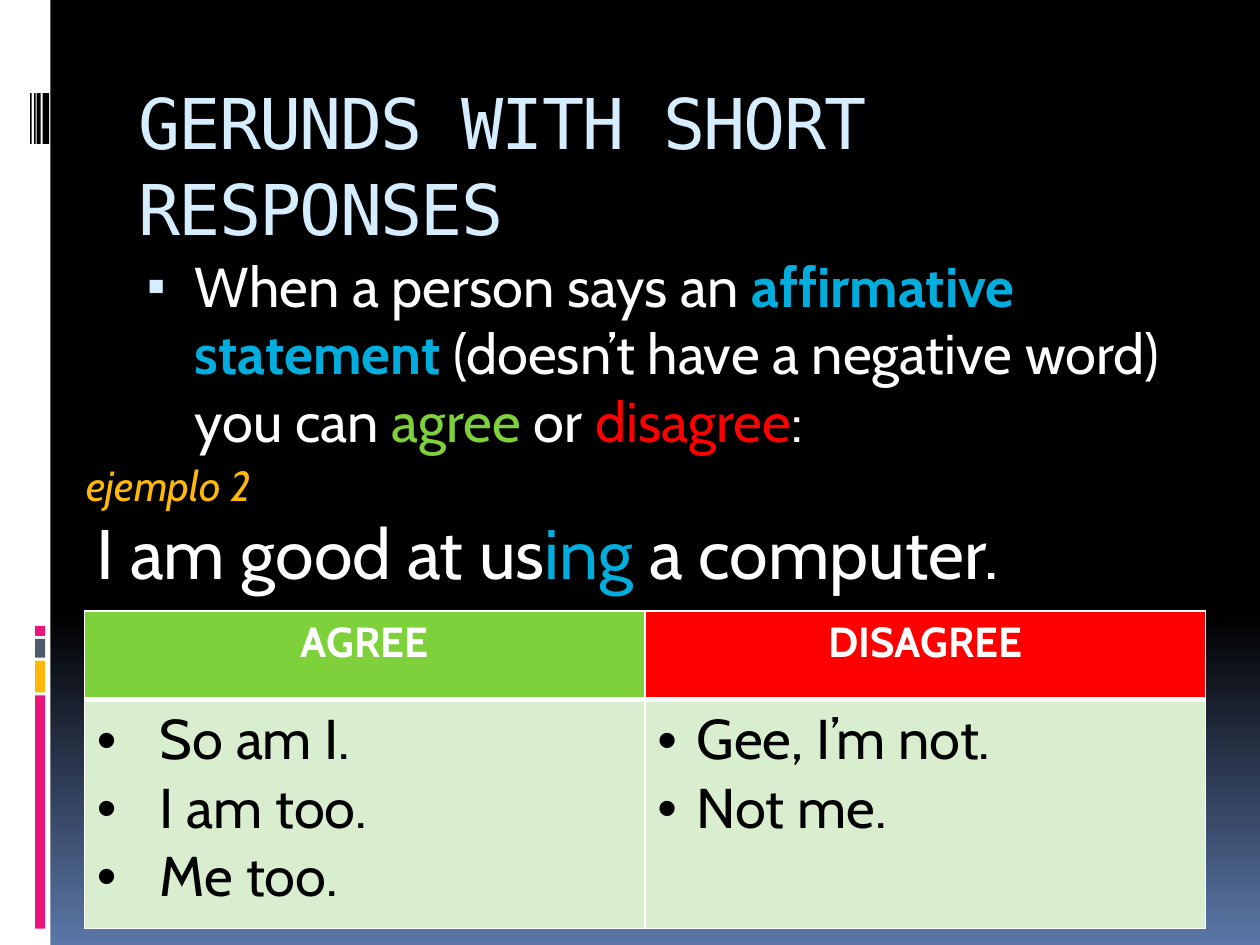
from lxml import etree
from pptx import Presentation
from pptx import util as u
from pptx.dml.color import RGBColor
from pptx.enum import shapes, text
from pptx.oxml import ns

THEME = {
    "white": "FFFFFF", "black": "000000", "ice": "D6ECFF", "blue": "00ADDC",
    "green": "7FD13B", "red": "FF0000", "gold": "FEB80A", "pink": "EA157A",
    "slate": "4E5B6F", "dusk": "5B77A8", "mint": "D8EECE",
    "body_font": "Cabin", "title_font": "DejaVu Sans Mono",
    "large": 40, "medium": 32, "small": 24,
}

BACKDROP = [(0, "black"), (65, "black"), (100, "dusk")]
TITLE = [("GERUNDS WITH SHORT RESPONSES", "ice", {})]
RULE = [
    ("When a person says an ", "white", {}),
    ("affirmative statement", "blue", {"bold": True}),
    (" (doesn’t have a negative word) you can ", "white", {}),
    ("agree", "green", {}),
    (" or ", "white", {}),
    ("disagree", "red", {}),
    (":", "white", {}),
]
EXAMPLE_LABEL = [("ejemplo 2", "gold", {"italic": True})]
EXAMPLE = [
    ("I am good at us", "white", {}),
    ("ing", "blue", {}),
    (" a computer.", "white", {}),
]
RESPONSES = [
    ("AGREE", "green", 1.27, ["So am I.", "I am too.", "Me too."]),
    ("DISAGREE", "red", 0.79, ["Gee, I’m not.", "Not me."]),
]
SIDE_BLOCKS = [("pink", 4.7), ("gold", 0.64), ("slate", 0.38), ("pink", 0.2)]
BARCODE = [(0.86, 0.13), (0.74, 0.08), (0.69, 0.03), (0.61, 0.03)]


def color(name):
    return RGBColor.from_string(THEME[name])


def add_xml(parent, tag, **attributes):
    return etree.SubElement(parent, ns.qn(tag), attributes)


def add_block(slide, left, top, width, height, fill):
    block = slide.shapes.add_shape(
        shapes.MSO_SHAPE.RECTANGLE, *map(u.Cm, (left, top, width, height)))
    block.shadow.inherit = False
    block.fill.solid()
    block.fill.fore_color.rgb = color(fill)
    block.line.fill.background()


def add_frame(slide, left, top, width, height):
    frame = slide.shapes.add_textbox(*map(u.Cm, (left, top, width, height))).text_frame
    frame.word_wrap = True
    return frame


def write(paragraph, pieces, size, font="body_font", **layout):
    for key, value in layout.items():
        setattr(paragraph, key, value)
    for words, ink, style in pieces:
        run = paragraph.add_run()
        run.text = words
        run.font.color.rgb = color(ink)
        formats = {"name": THEME[font], "size": u.Pt(THEME[size]), **style}
        for key, value in formats.items():
            setattr(run.font, key, value)


def indent(paragraph, margin, first):
    properties = paragraph._p.get_or_add_pPr()
    properties.set("marL", str(u.Cm(margin)))
    properties.set("indent", str(u.Cm(first)))
    return properties


def add_bullet(paragraph, mark, margin, hanging, ink, percent=100):
    properties = indent(paragraph, margin, -hanging)
    add_xml(add_xml(properties, "a:buClr"), "a:srgbClr", val=THEME[ink])
    add_xml(properties, "a:buSzPct", val=str(percent * 1000))
    add_xml(properties, "a:buFont", typeface="Arial")
    add_xml(properties, "a:buChar", char=mark)


def finish_cell(cell, fill, widths):
    properties = cell._tc.get_or_add_tcPr()
    for side in ("L", "R", "T", "B"):
        edge = add_xml(properties, f"a:ln{side}", w=str(u.Pt(widths.get(side, 1))))
        add_xml(add_xml(edge, "a:solidFill"), "a:srgbClr", val=THEME["white"])
    cell.fill.solid()
    cell.fill.fore_color.rgb = color(fill)


def paint_background(slide):
    fill = slide.background.fill
    fill.gradient()
    fill.gradient_angle = 270
    stops = slide._element.find(".//" + ns.qn("a:gsLst"))
    for stop in list(stops):
        stops.remove(stop)
    for position, ink in BACKDROP:
        stop = add_xml(stops, "a:gs", pos=str(position * 1000))
        add_xml(stop, "a:srgbClr", val=THEME[ink])


def add_side_strip(slide):
    add_block(slide, 0, 0, 1.02, 19.05, "white")
    bottom, gap = 18.72, 0.06
    for ink, height in SIDE_BLOCKS:
        add_block(slide, 0.71, bottom - height, 0.2, height, ink)
        bottom -= height + gap
    for left, width in BARCODE:
        add_block(slide, left, 1.88, width, 1.02, "black")


def add_responses(slide):
    table = slide.shapes.add_table(
        2, len(RESPONSES), *map(u.Cm, (1.7, 12.32, 22.6, 6.4))).table
    table.horz_banding = False
    for row, height in zip(table.rows, (1.78, 4.62)):
        row.height = u.Cm(height)
    for column, (heading, fill, hanging, answers) in enumerate(RESPONSES):
        header, body = table.cell(0, column), table.cell(1, column)
        write(header.text_frame.paragraphs[0], [(heading, "white", {"bold": True})],
              "small", alignment=text.PP_ALIGN.CENTER)
        for number, answer in enumerate(answers):
            frame = body.text_frame
            line = frame.add_paragraph() if number else frame.paragraphs[0]
            write(line, [(answer, "black", {"bold": False})], "medium")
            add_bullet(line, "•", hanging, hanging, "black")
        finish_cell(header, fill, {"B": 3})
        finish_cell(body, "mint", {"T": 3})


def main():
    deck = Presentation()
    deck.slide_width, deck.slide_height = u.Cm(25.4), u.Cm(19.05)
    slide = deck.slides.add_slide(deck.slide_layouts[6])
    paint_background(slide)
    add_side_strip(slide)

    title = add_frame(slide, 2.54, 1.42, 21.59, 2.54).paragraphs[0]
    write(title, TITLE, "large", "title_font", line_spacing=1.03)
    for run in title.runs:
        run.font._element.set("spc", "-100")

    rule = add_frame(slide, 2.54, 4.95, 21.59, 12.7).paragraphs[0]
    write(rule, RULE, "medium", space_before=u.Pt(7))
    add_bullet(rule, "▪", 1.14, 0.97, "ice", 95)

    example = add_frame(slide, 1.5, 9.14, 25.2, 3)
    write(example.paragraphs[0], EXAMPLE_LABEL, "small")
    sentence = example.add_paragraph()
    write(sentence, EXAMPLE, "large")
    indent(sentence, 0.2, 0)

    add_responses(slide)
    deck.save("out.pptx")


if __name__ == "__main__":
    main()
